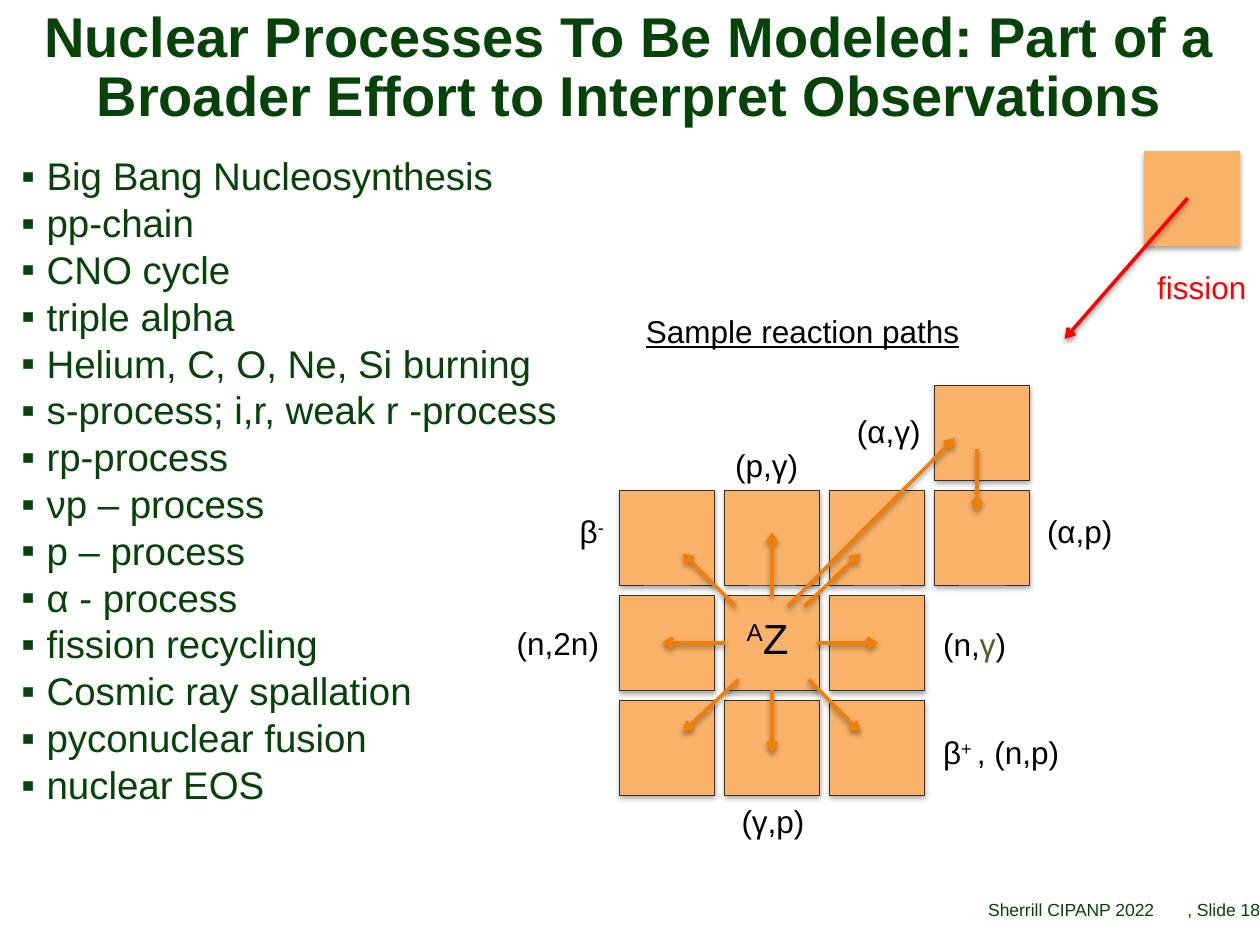
from lxml import etree
from pptx import Presentation
from pptx.dml.color import RGBColor
from pptx.enum.shapes import MSO_CONNECTOR, MSO_SHAPE
from pptx.enum.text import MSO_ANCHOR, MSO_AUTO_SIZE, PP_ALIGN
from pptx.oxml.ns import qn
from pptx.util import Inches, Pt

RECT, STRAIGHT = MSO_SHAPE.RECTANGLE, MSO_CONNECTOR.STRAIGHT
TOP, MIDDLE, BOTTOM = MSO_ANCHOR.TOP, MSO_ANCHOR.MIDDLE, MSO_ANCHOR.BOTTOM
LEFT, CENTER, RIGHT = PP_ALIGN.LEFT, PP_ALIGN.CENTER, PP_ALIGN.RIGHT

GREEN = RGBColor(0x06, 0x43, 0x08)
OLIVE = RGBColor(0x4F, 0x61, 0x28)
PEACH = RGBColor(0xF9, 0xB2, 0x68)
ORANGE = RGBColor(0xF0, 0x7F, 0x09)
RED = RGBColor(0xFF, 0x00, 0x00)
CHARCOAL = RGBColor(0x32, 0x32, 0x32)
BLACK = RGBColor(0x00, 0x00, 0x00)

W, H = 10, 7.5
CELL = 0.75
LABEL_H = 0.4
SUP = {"sup": True}

PROCESSES = [
    "Big Bang Nucleosynthesis", "pp-chain", "CNO cycle", "triple alpha",
    "Helium, C, O, Ne, Si burning", "s-process; i,r, weak r -process",
    "rp-process", "νp – process", "p – process", "α - process",
    "fission recycling", "Cosmic ray spallation", "pyconuclear fusion",
    "nuclear EOS",
]

# Diagram parts in (column, row) units of the nuclide grid
CELLS = [(3, 0)] + [(c, 1) for c in range(4)] + [
    (c, r) for r in (2, 3) for c in range(3)]
ARROWS = [
    ((1.76, 2.1), (2.29, 1.6)), ((1.45, 2), (1.45, 1.4)),
    ((1.1, 2.1), (0.6, 1.6)), ((1, 2.45), (0.4, 2.45)),
    ((1.88, 2.45), (2.46, 2.45)), ((1.13, 2.8), (0.6, 3.3)),
    ((1.45, 2.9), (1.45, 3.5)), ((1.8, 2.8), (2.29, 3.3)),
    ((1.6, 2.1), (3.19, 0.5)), ((3.4, 0.6), (3.4, 1.2)),
]
# column, row, width in inches, runs, format
LABELS = [
    (0.13, -0.76, 2.71, [("Sample reaction paths", {})], {"underline": True}),
    (1.09, 2.1, 0.56, [("A", SUP), ("Z", {})], {"size": 24}),
    (2.14, 0.19, 0.71, [("(α,γ)", {})], {}),
    (0.98, 0.52, 0.71, [("(p,γ)", {})], {}),
    (-0.5, 1.15, 0.4, [("β", {}), ("-", SUP)], {}),
    (3.95, 1.15, 0.73, [("(α,p)", {})], {}),
    (-1.1, 2.21, 0.86, [("(n,2n)", {})], {}),
    (2.96, 2.22, 0.71, [("(n,", {}), ("γ", {"color": OLIVE}), (")", {})], {}),
    (2.96, 3.25, 1.15, [("β", {}), ("+ ", SUP), (", (n,p)", {})], {}),
    (1.04, 3.91, 0.71, [("(γ,p)", {})], {}),
]


def add_run(p, text, size=18, color=BLACK, bold=False, underline=False,
            sup=False):
    r = p.add_run()
    r.text = text
    f = r.font
    f.name, f.size, f.bold = "Arial", Pt(size), bold
    f.color.rgb = color
    if underline:
        f.underline = True
    if sup:
        f._element.set("baseline", "30000")


def add_frame(s, box, insets=(0, 0, 0, 0), anchor=TOP, wrap=True):
    tf = s.shapes.add_textbox(*map(Inches, box)).text_frame
    (tf.margin_left, tf.margin_top,
     tf.margin_right, tf.margin_bottom) = map(Inches, insets)
    tf.vertical_anchor, tf.word_wrap = anchor, wrap
    return tf


def add_text(s, box, text, align=LEFT, spacing=0.9, insets=(0, 0, 0, 0),
             anchor=TOP, **fmt):
    p = add_frame(s, box, insets, anchor).paragraphs[0]
    p.alignment, p.line_spacing = align, spacing
    add_run(p, text, color=GREEN, **fmt)


def add_label(s, x, y, width, runs, **fmt):
    tf = add_frame(s, (x, y, width, LABEL_H), (0.1, 0.05, 0.1, 0.05),
                   wrap=False)
    tf.auto_size = MSO_AUTO_SIZE.SHAPE_TO_FIT_TEXT
    for text, own in runs:
        add_run(tf.paragraphs[0], text, **{**fmt, **own})


def add_shadow(sp, alpha, dist):
    effects = etree.SubElement(sp._element.spPr, qn("a:effectLst"))
    shadow = etree.SubElement(
        effects, qn("a:outerShdw"), blurRad=str(Pt(3.1)), dist=str(Pt(dist)),
        dir="5400000", rotWithShape="0")
    black = etree.SubElement(shadow, qn("a:srgbClr"), val="000000")
    etree.SubElement(black, qn("a:alpha"), val=str(alpha * 1000))


def add_cell(s, x, y, line=CHARCOAL, width=0.5):
    sp = s.shapes.add_shape(RECT, *map(Inches, (x, y, CELL, CELL)))
    sp.fill.solid()
    sp.fill.fore_color.rgb = PEACH
    sp.line.color.rgb, sp.line.width = line, Pt(width)
    add_shadow(sp, 35, 1.8)


def add_arrow(s, start, end, color=ORANGE):
    sp = s.shapes.add_connector(STRAIGHT, *map(Inches, (*start, *end)))
    sp.line.color.rgb, sp.line.width = color, Pt(2)
    etree.SubElement(sp.line._get_or_add_ln(), qn("a:tailEnd"), type="arrow")
    add_shadow(sp, 38, 1.6)


def process_list(s, box):
    tf = add_frame(s, box)
    for i, text in enumerate(PROCESSES):
        p = tf.add_paragraph() if i else tf.paragraphs[0]
        p.line_spacing = 0.9
        p.space_before = Pt(3 if i else 0)
        pPr = p._p.get_or_add_pPr()
        pPr.set("marL", str(Inches(0.2)))
        pPr.set("indent", str(-Inches(0.2)))
        etree.SubElement(pPr, qn("a:buFont"), typeface="Arial")
        etree.SubElement(pPr, qn("a:buChar"), char="▪")
        add_run(p, text, size=22, color=GREEN)


def reaction_grid(s, box):
    x, y, w, h = box

    def at(col, row):
        return x + col * w / 4, y + row * h / 4

    for cell in CELLS:
        add_cell(s, *at(*cell))
    for start, end in ARROWS:
        add_arrow(s, at(*start), at(*end))
    for col, row, width, runs, fmt in LABELS:
        add_label(s, *at(col, row), width, runs, **fmt)


def fission_path(s, box):
    x, y, w, h = box
    left = x + 0.41 * w
    add_cell(s, left, y, line=PEACH, width=0.75)
    add_arrow(s, (x + 0.63 * w, y + 0.25 * h), (x, y + h), color=RED)
    add_label(s, left, y + 0.59 * h, 0.92, [("fission", {})], color=RED)


def footer(s, box):
    x, y, w, h = box
    split = 0.79 * w
    add_text(s, (x, y, split, h), "Sherrill CIPANP 2022", align=RIGHT,
             insets=(0, 0.05, 0, 0.05), anchor=BOTTOM, size=10)
    add_text(s, (x + split, y, w - split, h), ", Slide 18", align=RIGHT,
             insets=(0, 0, 0, 0.05), anchor=BOTTOM, size=10)


def main():
    prs = Presentation()
    prs.slide_width, prs.slide_height = Inches(W), Inches(H)
    s = prs.slides.add_slide(prs.slide_layouts[6])
    process_list(s, (0.17, 1.25, W - 0.17, 5.5))
    add_text(s, (0.08, 0.05, 9.83, 1),
             "Nuclear Processes To Be Modeled: Part of a Broader Effort "
             "to Interpret Observations",
             align=CENTER, spacing=0.88, insets=(0.06, 0.02, 0.06, 0.02),
             anchor=MIDDLE, size=32, bold=True)
    reaction_grid(s, (4.92, 3.06, W / 3, W / 3))
    fission_path(s, (8.45, 1.2, 1.55, 1.49))
    footer(s, (6, 6.95, 4, 0.4))
    prs.save("out.pptx")


if __name__ == "__main__":
    main()
